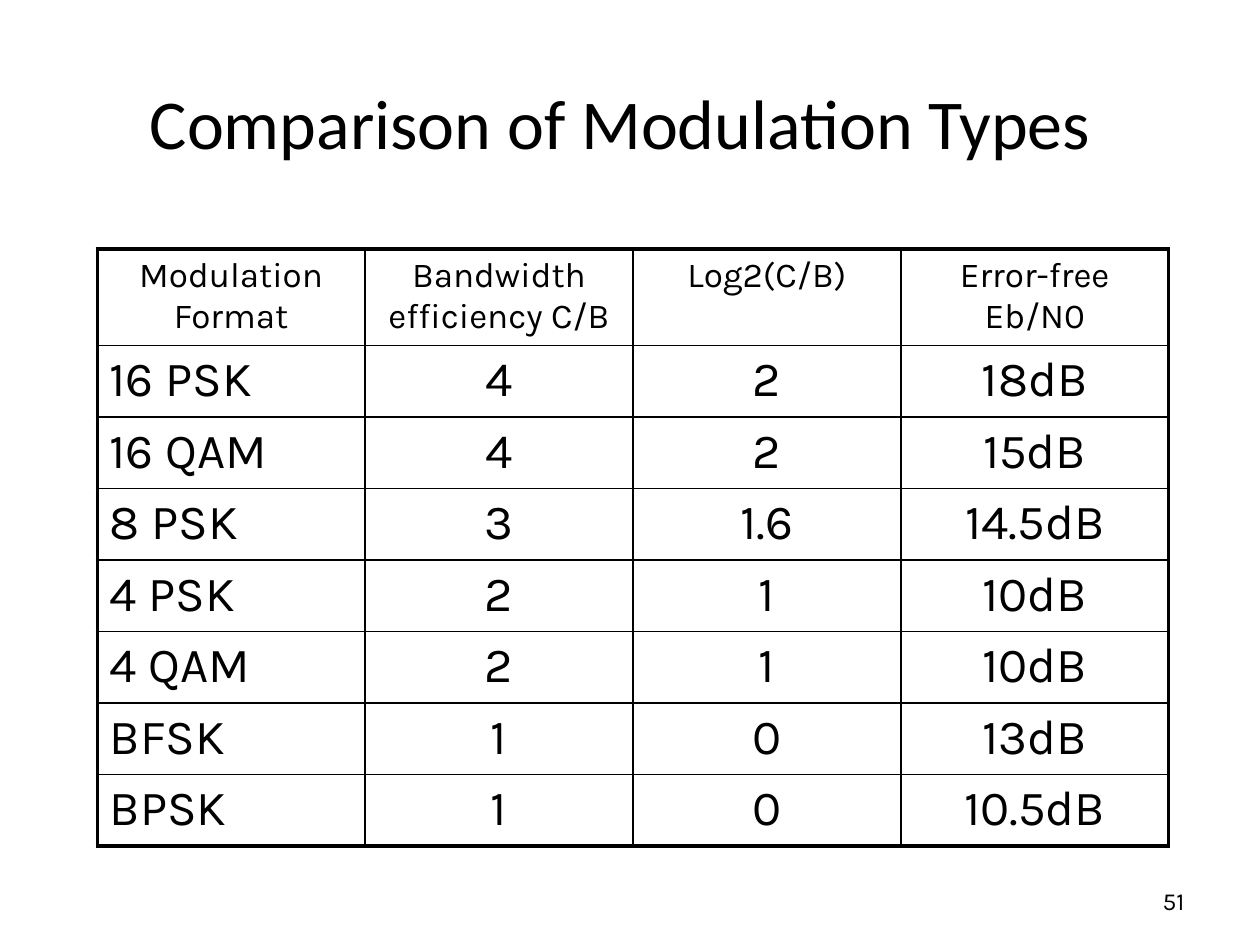
import pptx
import pptx.dml.color
import pptx.enum.text
import pptx.oxml
import pptx.oxml.ns
import pptx.util
from pptx.util import Cm

BLACK = pptx.dml.color.RGBColor(0, 0, 0)
ALIGN = pptx.enum.text.PP_ALIGN
MIDDLE = pptx.enum.text.MSO_ANCHOR.MIDDLE
THIN, THICK = 1, 2.25

ROWS = [
    ("Modulation Format", "Bandwidth efficiency C/B", "Log2(C/B)", "Error-free Eb/N0"),
    ("16 PSK", "4", "2", "18dB"),
    ("16 QAM", "4", "2", "15dB"),
    ("8 PSK", "3", "1.6", "14.5dB"),
    ("4 PSK", "2", "1", "10dB"),
    ("4 QAM", "2", "1", "10dB"),
    ("BFSK", "1", "0", "13dB"),
    ("BPSK", "1", "0", "10.5dB"),
]


def write(frame, text, size, align, face="Karla"):
    frame.text = text
    para = frame.paragraphs[0]
    para.alignment = align
    para.font.name = face
    para.font.size = pptx.util.Pt(size)
    para.font.color.rgb = BLACK


def add_text(slide, box, text, size, align, face="Karla"):
    frame = slide.shapes.add_textbox(*map(Cm, box)).text_frame
    frame.word_wrap = True
    frame.vertical_anchor = MIDDLE
    write(frame, text, size, align, face)


def add_edge(cell, side, width):
    """Draw one border; call before the fill is set, which must follow it."""
    line = pptx.oxml.parse_xml(
        f'<a:ln{side} {pptx.oxml.ns.nsdecls("a")} w="{pptx.util.Pt(width)}">'
        f'<a:solidFill><a:srgbClr val="{BLACK}"/></a:solidFill></a:ln{side}>'
    )
    cell._tc.get_or_add_tcPr().append(line)


def add_grid(slide, left, top, width, height):
    last_row, last_col = len(ROWS) - 1, len(ROWS[0]) - 1
    table = slide.shapes.add_table(
        len(ROWS), len(ROWS[0]), Cm(left), Cm(top), Cm(width), Cm(height)
    ).table
    table.first_row = table.horz_banding = False
    for r, row in enumerate(ROWS):
        for c, text in enumerate(row):
            cell = table.cell(r, c)
            size = 20 if r == 0 else 28
            align = ALIGN.LEFT if c == 0 and r > 0 else ALIGN.CENTER
            write(cell.text_frame, text, size, align)
            outer = {"L": c == 0, "R": c == last_col, "T": r == 0, "B": r == last_row}
            for side, edge in outer.items():
                add_edge(cell, side, THICK if edge else THIN)
            cell.fill.background()
    table.rows[0].height = Cm(1.9)


def main():
    deck = pptx.Presentation()
    deck.slide_width, deck.slide_height = Cm(25.4), Cm(19.05)
    slide = deck.slides.add_slide(deck.slide_layouts[6])
    add_text(slide, (1.7, 0.85, 21.6, 3.18), "Comparison of Modulation Types",
             40, ALIGN.CENTER, "Calibri")
    add_grid(slide, 1.96, 5.02, 21.6, 11.44)
    add_text(slide, (18.2, 17.65, 5.93, 1.01), "51", 14, ALIGN.RIGHT)
    deck.save("out.pptx")


if __name__ == "__main__":
    main()
